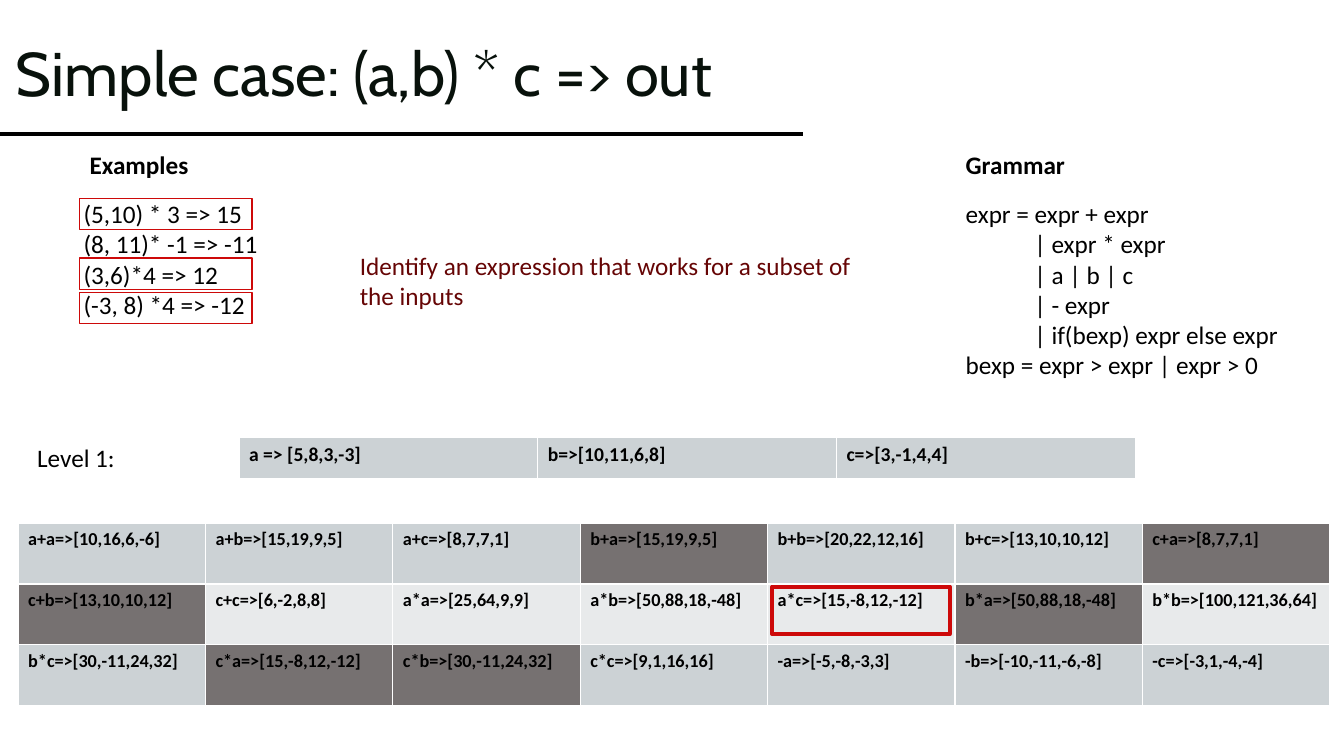
import pptx
import pptx.util
import pptx.dml.color
import pptx.enum.shapes
import pptx.enum.text
import pptx.oxml
import pptx.oxml.ns

Inches = pptx.util.Inches
Pt = pptx.util.Pt
HUES = {"black": "000000", "title": "08110B", "note": "660505", "red": "CD0909",
        "white": "FFFFFF", "blue": "CCD2D5", "pale": "E8EAEB", "dark": "767171"}
NS = pptx.oxml.ns.nsdecls("a")

SUMS = [
    ["a+a=>[10,16,6,-6]", "a+b=>[15,19,9,5]", "a+c=>[8,7,7,1]", "b+a=>[15,19,9,5]",
     "b+b=>[20,22,12,16]", "b+c=>[13,10,10,12]", "c+a=>[8,7,7,1]"],
    ["c+b=>[13,10,10,12]", "c+c=>[6,-2,8,8]", "a*a=>[25,64,9,9]", "a*b=>[50,88,18,-48]",
     "a*c=>[15,-8,12,-12]", "b*a=>[50,88,18,-48]", "b*b=>[100,121,36,64]"],
    ["b*c=>[30,-11,24,32]", "c*a=>[15,-8,12,-12]", "c*b=>[30,-11,24,32]",
     "c*c=>[9,1,16,16]", "-a=>[-5,-8,-3,3]", "-b=>[-10,-11,-6,-8]", "-c=>[-3,1,-4,-4]"],
]
BASE = [["a => [5,8,3,-3]", "b=>[10,11,6,8]", "c=>[3,-1,4,4]"]]


def hue(name):
    return pptx.dml.color.RGBColor.from_string(HUES[name])


def add_run(para, text, size, color="black", bold=False, face="Calibri"):
    run = para.add_run()
    run.text = text
    run.font.size = Pt(size)
    run.font.name = face
    run.font.bold = bold
    run.font.color.rgb = hue(color)


def add_text(slide, box, lines, size=18, color="black", bold=False, face="Calibri"):
    """Write one paragraph per line; a newline inside a line is a soft break."""
    frame = slide.shapes.add_textbox(*map(Inches, box)).text_frame
    frame.word_wrap = False
    for i, line in enumerate(lines):
        para = frame.paragraphs[0] if i == 0 else frame.add_paragraph()
        # Grammar alternatives hang under the rule's right-hand side
        if line.startswith("|"):
            para._p.get_or_add_pPr().set("marL", str(Inches(0.68)))
        for j, part in enumerate(line.split("\n")):
            if j:
                para.add_line_break()
            add_run(para, part, size, color, bold, face)
    return frame


def add_rule(slide, x1, y1, x2, y2):
    line = slide.shapes.add_connector(
        pptx.enum.shapes.MSO_CONNECTOR.STRAIGHT, *map(Inches, (x1, y1, x2, y2)))
    line.line.color.rgb = hue("black")
    line.line.width = Pt(2.25)
    line._element.spPr.append(pptx.oxml.parse_xml(f"<a:effectLst {NS}/>"))


def add_frame(slide, box, width):
    rect = slide.shapes.add_shape(
        pptx.enum.shapes.MSO_SHAPE.RECTANGLE, *map(Inches, box))
    rect.shadow.inherit = False
    rect.fill.background()
    rect.line.color.rgb = hue("red")
    rect.line.width = Pt(width)


def add_edges(cell):
    props = cell._tc.get_or_add_tcPr()
    for side in ("lnL", "lnR", "lnT", "lnB"):
        props.append(pptx.oxml.parse_xml(
            f'<a:{side} {NS} w="{Pt(1)}"><a:solidFill>'
            f'<a:srgbClr val="{HUES["white"]}"/></a:solidFill></a:{side}>'))


def add_grid(slide, box, rows, size):
    """Shade rows in turn, and darken each cell whose values came before."""
    table = slide.shapes.add_table(len(rows), len(rows[0]), *map(Inches, box)).table
    table.first_row = False
    table.horz_banding = False
    seen = set()
    for r, row in enumerate(rows):
        for c, text in enumerate(row):
            cell = table.cell(r, c)
            add_run(cell.text_frame.paragraphs[0], text, size, bold=True)
            add_edges(cell)
            values = text.split("=>")[1]
            shade = "dark" if values in seen else ("blue", "pale")[r % 2]
            seen.add(values)
            cell.fill.solid()
            cell.fill.fore_color.rgb = hue(shade)


def main():
    deck = pptx.Presentation()
    deck.slide_width = Inches(13.33)
    deck.slide_height = Inches(7.5)
    slide = deck.slides.add_slide(deck.slide_layouts[6])

    # Title
    add_rule(slide, 0, 1.33, 7.96, 1.33)
    title = add_text(slide, (0.06, 0.03, 7.51, 1.45), ["Simple case: (a,b) * c => out"],
                     44, "title", face="Cabin")
    title.word_wrap = True
    title.vertical_anchor = pptx.enum.text.MSO_ANCHOR.MIDDLE
    title.paragraphs[0].line_spacing = 0.9

    # Grammar
    add_text(slide, (9.48, 1.43, 1.2, 0.4), ["Grammar"], bold=True)
    add_text(slide, (9.48, 1.92, 3.34, 2.22), [
        "expr = expr + expr", "| expr * expr", "| a | b | c", "| - expr",
        "| if(bexp) expr else expr", "bexp = expr > expr | expr > 0"])

    # Examples, with the solved subset framed
    add_text(slide, (0.79, 1.43, 1.19, 0.4), ["Examples"], bold=True)
    add_text(slide, (0.73, 1.92, 1.95, 1.31), [
        "(5,10) * 3 => 15", "(8, 11)* -1 => -11", "(3,6)*4 => 12", "(-3, 8) *4 => -12"])
    add_text(slide, (3.47, 2.43, 5.18, 0.71),
             ["Identify an expression that works for a subset of \nthe inputs"], color="note")
    for top in (1.97, 2.56, 2.9):
        add_frame(slide, (0.79, top, 1.71, 0.31), 0.85)

    # Expression levels
    add_text(slide, (0.27, 4.34, 1.04, 0.4), ["Level 1:"])
    add_grid(slide, (2.37, 4.34, 8.89, 0.41), BASE, 14)
    add_grid(slide, (0.18, 5.19, 13.01, 1.81), SUMS, 13)
    add_frame(slide, (7.66, 5.82, 1.76, 0.47), 3)

    deck.save("out.pptx")


if __name__ == "__main__":
    main()
